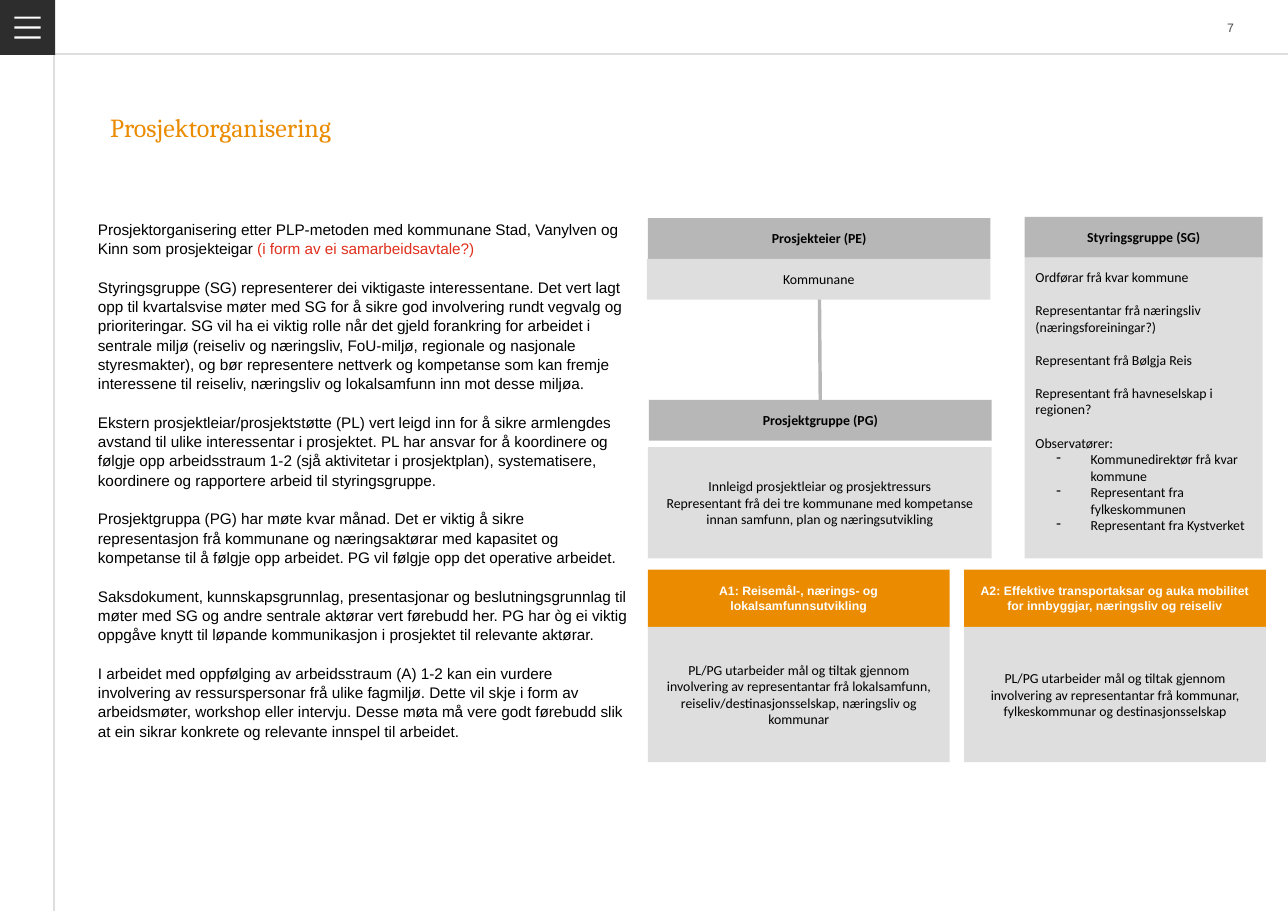
from dataclasses import dataclass

from lxml import etree
from pptx import Presentation
from pptx.dml.color import RGBColor
from pptx.enum.shapes import MSO_CONNECTOR, MSO_SHAPE
from pptx.enum.text import MSO_ANCHOR, MSO_AUTO_SIZE, PP_ALIGN
from pptx.oxml.ns import qn
from pptx.util import Inches, Pt

RECT, STRAIGHT = MSO_SHAPE.RECTANGLE, MSO_CONNECTOR.STRAIGHT
TOP, MIDDLE = MSO_ANCHOR.TOP, MSO_ANCHOR.MIDDLE
LEFT, CENTER, RIGHT = PP_ALIGN.LEFT, PP_ALIGN.CENTER, PP_ALIGN.RIGHT

BLACK = RGBColor(0x00, 0x00, 0x00)
WHITE = RGBColor(0xFF, 0xFF, 0xFF)
DARK = RGBColor(0x2D, 0x2D, 0x2D)
TEXT_GREY = RGBColor(0x46, 0x46, 0x46)
MID_GREY = RGBColor(0xB7, 0xB7, 0xB7)
LIGHT_GREY = RGBColor(0xDE, 0xDE, 0xDE)
ORANGE = RGBColor(0xEB, 0x8C, 0x00)
RED = RGBColor(0xE0, 0x30, 0x1E)


@dataclass(frozen=True)
class Style:
    fill: RGBColor
    color: RGBColor = BLACK
    font: str = "Calibri"
    size: float = 9
    bold: bool = False
    align: PP_ALIGN = CENTER
    anchor: MSO_ANCHOR = MIDDLE


@dataclass(frozen=True)
class Box:
    left: float
    top: float
    width: float
    height: float
    style: Style
    lines: tuple[str, ...]


HEADER = Style(MID_GREY, bold=True)
PANEL = Style(LIGHT_GREY)
LIST_PANEL = Style(LIGHT_GREY, align=LEFT, anchor=TOP)
WORKSTREAM = Style(ORANGE, WHITE, "Arial", 8, True)

OWNER = Box(5.88, 1.98, 3.11, 0.37, HEADER, ("Prosjekteier (PE)",))
GROUP = Box(5.89, 3.63, 3.11, 0.37, HEADER, ("Prosjektgruppe (PG)",))
BOXES = (
    Box(5.87, 2.35, 3.12, 0.37, PANEL, ("Kommunane",)),
    Box(5.88, 4.06, 3.12, 1.01, PANEL, (
        "Innleigd prosjektleiar og prosjektressurs",
        "Representant frå dei tre kommunane med kompetanse innan samfunn, plan "
        "og næringsutvikling")),
    Box(9.3, 1.97, 2.16, 0.37, HEADER, ("Styringsgruppe (SG)",)),
)
STEERING = Box(9.3, 2.34, 2.16, 2.73, LIST_PANEL, (
    "Ordførar frå kvar kommune",
    "Representantar frå næringsliv (næringsforeiningar?)",
    "Representant frå Bølgja Reis",
    "Representant frå havneselskap i regionen?",
    "Observatører:",
    "Kommunedirektør frå kvar kommune",
    "Representant fra fylkeskommunen",
    "Representant fra Kystverket"))
FIRST_OBSERVER = 5
WORKSTREAMS = (
    ("A1: Reisemål-, nærings- og lokalsamfunnsutvikling",
     "PL/PG utarbeider mål og tiltak gjennom involvering av representantar frå "
     "lokalsamfunn, reiseliv/destinasjonsselskap, næringsliv og kommunar"),
    ("A2: Effektive transportaksar og auka mobilitet for innbyggjar, næringsliv og reiseliv",
     "PL/PG utarbeider mål og tiltak gjennom involvering av representantar frå "
     "kommunar, fylkeskommunar og destinasjonsselskap"),
)
BODY = (
    "Prosjektorganisering etter PLP-metoden med kommunane Stad, Vanylven og Kinn "
    "som prosjekteigar ",
    "Styringsgruppe (SG) representerer dei viktigaste interessentane. Det vert lagt opp til "
    "kvartalsvise møter med SG for å sikre god involvering rundt vegvalg og prioriteringar. "
    "SG vil ha ei viktig rolle når det gjeld forankring for arbeidet i sentrale miljø "
    "(reiseliv og næringsliv, FoU-miljø, regionale og nasjonale styresmakter), og bør "
    "representere nettverk og kompetanse som kan fremje interessene til reiseliv, næringsliv "
    "og lokalsamfunn inn mot desse miljøa.",
    "Ekstern prosjektleiar/prosjektstøtte (PL) vert leigd inn for å sikre armlengdes avstand "
    "til ulike interessentar i prosjektet. PL har ansvar for å koordinere og følgje opp "
    "arbeidsstraum 1-2 (sjå aktivitetar i prosjektplan), systematisere, koordinere og "
    "rapportere arbeid til styringsgruppe.",
    "Prosjektgruppa (PG) har møte kvar månad. Det er viktig å sikre representasjon frå "
    "kommunane og næringsaktørar med kapasitet og kompetanse til å følgje opp arbeidet. "
    "PG vil følgje opp det operative arbeidet.",
    "Saksdokument, kunnskapsgrunnlag, presentasjonar og beslutningsgrunnlag til møter med SG "
    "og andre sentrale aktørar vert førebudd her. PG har òg ei viktig oppgåve knytt til "
    "løpande kommunikasjon i prosjektet til relevante aktørar.",
    "I arbeidet med oppfølging av arbeidsstraum (A) 1-2 kan ein vurdere involvering av "
    "ressurspersonar frå ulike fagmiljø. Dette vil skje i form av arbeidsmøter, workshop "
    "eller intervju. Desse møta må vere godt førebudd slik at ein sikrar konkrete og "
    "relevante innspel til arbeidet.",
)


def set_frame(tf, inset: float, anchor: MSO_ANCHOR) -> None:
    tf.word_wrap = True
    tf.auto_size = MSO_AUTO_SIZE.NONE
    tf.vertical_anchor = anchor
    tf.margin_left = tf.margin_right = tf.margin_top = tf.margin_bottom = Inches(inset)


def write(tf, lines: tuple[str, ...], font: str, size: float, color: RGBColor,
          align: PP_ALIGN = LEFT, bold: bool = False) -> None:
    for i, line in enumerate(lines):
        p = tf.paragraphs[0] if i == 0 else tf.add_paragraph()
        p.add_run().text = line
        p.alignment = align
        p.font.name, p.font.size, p.font.bold = font, Pt(size), bold
        p.font.color.rgb = color


def add_rect(slide, left: float, top: float, width: float, height: float, fill: RGBColor):
    sp = slide.shapes.add_shape(RECT, Inches(left), Inches(top), Inches(width), Inches(height))
    sp.shadow.inherit = False
    sp.fill.solid()
    sp.fill.fore_color.rgb = fill
    sp.line.fill.background()
    return sp


def add_box(slide, box: Box):
    st = box.style
    sp = add_rect(slide, box.left, box.top, box.width, box.height, st.fill)
    set_frame(sp.text_frame, 0.1, st.anchor)
    write(sp.text_frame, box.lines, st.font, st.size, st.color, st.align, st.bold)
    return sp


def add_text(slide, left: float, top: float, width: float, height: float,
             inset: float, anchor: MSO_ANCHOR):
    sp = slide.shapes.add_textbox(Inches(left), Inches(top), Inches(width), Inches(height))
    set_frame(sp.text_frame, inset, anchor)
    return sp.text_frame


def add_line(slide, x1: float, y1: float, x2: float, y2: float, color: RGBColor, width: float):
    line = slide.shapes.add_connector(STRAIGHT, Inches(x1), Inches(y1), Inches(x2), Inches(y2))
    line.line.color.rgb = color
    line.line.width = Pt(width)
    etree.SubElement(line._element.spPr, qn("a:effectLst"))
    return line


def add_dash(p) -> None:
    pPr = p._p.get_or_add_pPr()
    pPr.set("marL", str(Inches(0.5)))
    pPr.set("indent", str(Inches(-0.31)))
    bullet = etree.Element(qn("a:buChar"), char="-")
    pPr.insert_element_before(bullet, "a:tabLst", "a:defRPr", "a:extLst")


def main() -> None:
    prs = Presentation()
    prs.slide_width, prs.slide_height = Inches(11.69), Inches(8.27)
    slide = prs.slides.add_slide(prs.slide_layouts[5])

    # Page frame, menu icon and page number
    add_line(slide, 0, 0.49, 11.69, 0.49, LIGHT_GREY, 0.75)
    add_line(slide, 0.49, 0, 0.49, 8.27, LIGHT_GREY, 0.75)
    add_rect(slide, 0, 0, 0.5, 0.5, DARK)
    for i in range(3):
        add_rect(slide, 0.13, 0.15 + 0.09 * i, 0.24, 0.02, WHITE)
    write(add_text(slide, 10.7, 0, 0.5, 0.5, 0, MIDDLE), ("7",), "Arial", 8, TEXT_GREY, RIGHT)

    # Title
    title = slide.shapes.title
    title.left, title.top, title.width, title.height = map(Inches, (1, 1, 10.2, 0.58))
    set_frame(title.text_frame, 0, TOP)
    write(title.text_frame, ("Prosjektorganisering",), "Cambria", 17, ORANGE)
    title.text_frame.paragraphs[0].line_spacing = 1.05

    # Organisation chart
    owner, group = add_box(slide, OWNER), add_box(slide, GROUP)
    link = add_line(slide, 7.43, 2.35, 7.44, 3.63, MID_GREY, 2.25)
    link.begin_connect(owner, 2)
    link.end_connect(group, 0)
    for box in BOXES:
        add_box(slide, box)

    # Steering group members, with the observers as a dashed list
    members = add_box(slide, STEERING).text_frame.paragraphs
    for p in members[:FIRST_OBSERVER - 1]:
        p.space_after = Pt(10.8)
    for p in members[FIRST_OBSERVER:]:
        add_dash(p)

    # Workstreams
    for i, (name, task) in enumerate(WORKSTREAMS):
        left = 5.88 + 2.87 * i
        add_box(slide, Box(left, 5.17, 2.74, 0.52, WORKSTREAM, (name,)))
        add_box(slide, Box(left, 5.69, 2.74, 1.23, PANEL, (task,)))

    # Body text
    tf = add_text(slide, 0.79, 1.89, 5.01, 5.5, 0.1, TOP)
    write(tf, BODY, "Arial", 10, BLACK)
    for p in tf.paragraphs:
        p.line_spacing = 1.05
        p.space_after = Pt(12.6)
    r = tf.paragraphs[0].add_run()
    r.text = "(i form av ei samarbeidsavtale?)"
    r.font.color.rgb = RED

    prs.save("out.pptx")


if __name__ == "__main__":
    main()
